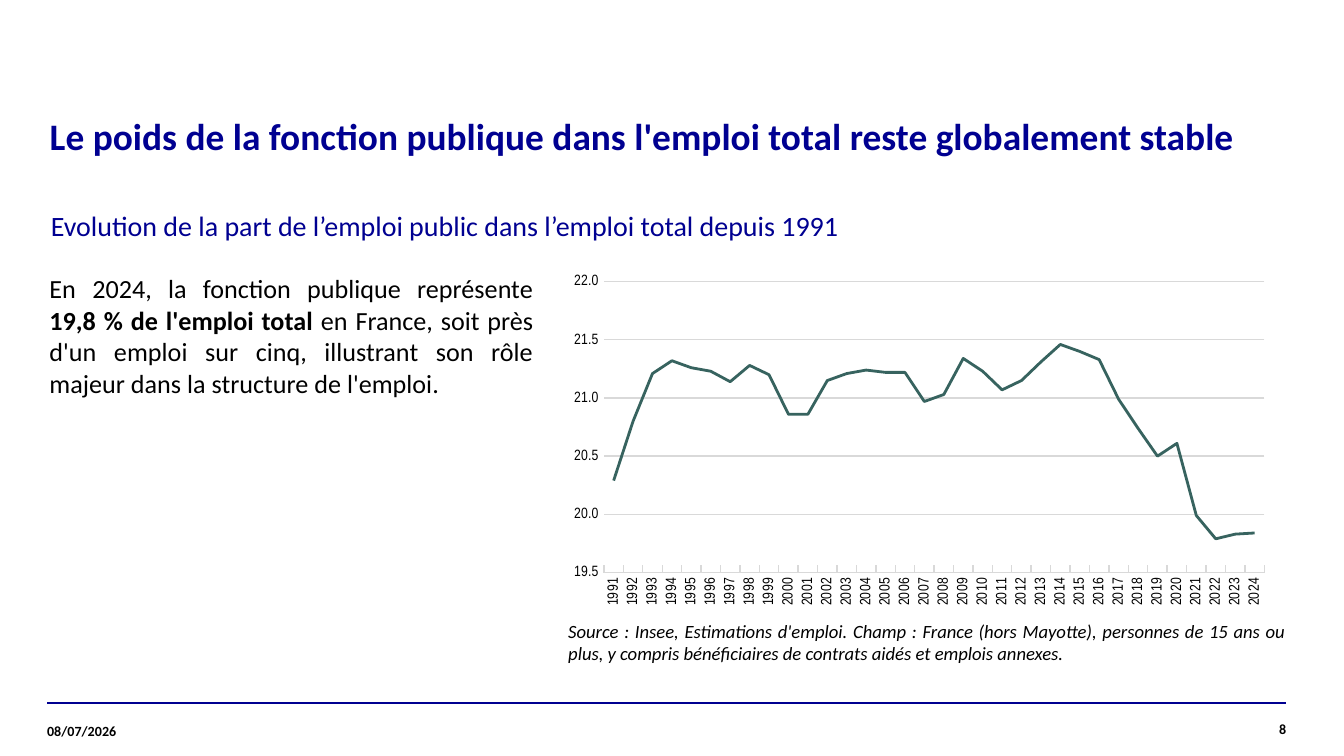
"""Build a slide on the share of public employment in France since 1991."""
from lxml import etree
from pptx import Presentation
from pptx.chart.data import CategoryChartData
from pptx.dml.color import RGBColor
from pptx.enum.chart import XL_CHART_TYPE, XL_MARKER_STYLE, XL_TICK_MARK
from pptx.enum.shapes import MSO_CONNECTOR
from pptx.enum.text import MSO_ANCHOR, PP_ALIGN
from pptx.oxml import parse_xml
from pptx.oxml.ns import nsdecls, qn
from pptx.util import Inches, Pt

LEFT, RIGHT, JUSTIFY = PP_ALIGN.LEFT, PP_ALIGN.RIGHT, PP_ALIGN.JUSTIFY
TOP, MIDDLE = MSO_ANCHOR.TOP, MSO_ANCHOR.MIDDLE
LINE_CHART = XL_CHART_TYPE.LINE
NO_MARKER = XL_MARKER_STYLE.NONE
TICK_INSIDE, TICK_NONE = XL_TICK_MARK.INSIDE, XL_TICK_MARK.NONE
STRAIGHT = MSO_CONNECTOR.STRAIGHT

SLIDE_WIDTH = 10
SLIDE_HEIGHT = SLIDE_WIDTH * 9 / 16
COLORS = {"navy": "000091", "black": "000000", "grid": "D9D9D9", "green": "37635F"}
TEXT_FONT, AXIS_FONT = "Calibri", "Arial Narrow"

TITLE = "Le poids de la fonction publique dans l'emploi total reste globalement stable"
SUBTITLE = "Evolution de la part de l’emploi public dans l’emploi total depuis 1991"
BODY = [
    ("En 2024, la fonction publique représente ", False),
    ("19,8 % de l'emploi total ", True),
    ("en France, soit près d'un emploi sur cinq, illustrant son rôle majeur "
     "dans la structure de l'emploi.", False),
]
SOURCE = ("Source : Insee, Estimations d'emploi. Champ : France (hors Mayotte), personnes "
          "de 15 ans ou plus, y compris bénéficiaires de contrats aidés et emplois annexes.")
DATE, PAGE = "08/07/2026", "8"

FIRST_YEAR = 1991
SERIES_NAME = "Series 1"
SHARES = [
    20.29, 20.8, 21.21, 21.32, 21.26, 21.23, 21.14, 21.28, 21.2, 20.86, 20.86, 21.15,
    21.21, 21.24, 21.22, 21.22, 20.97, 21.03, 21.34, 21.23, 21.07, 21.15, 21.31, 21.46,
    21.4, 21.33, 20.99, 20.74, 20.5, 20.61, 19.99, 19.79, 19.83, 19.84,
]
PLOT_AREA = {"x": 0.067, "y": 0.062, "w": 0.905, "h": 0.808}


def color(name):
    return RGBColor.from_string(COLORS[name])


def add_text(slide, box, runs, size, color_name="black", bold=None, italic=None,
             align=LEFT, anchor=TOP, inset=(0, 0)):
    shape = slide.shapes.add_textbox(*map(Inches, box))
    frame = shape.text_frame
    frame.word_wrap = True
    frame.vertical_anchor = anchor
    frame.margin_left, frame.margin_top = map(Inches, inset)
    frame.margin_right = frame.margin_bottom = 0
    paragraph = frame.paragraphs[0]
    paragraph.alignment = align
    font = paragraph.font
    font.name, font.size, font.bold, font.italic = TEXT_FONT, Pt(size), bold, italic
    font.color.rgb = color(color_name)
    for text, run_bold in runs:
        run = paragraph.add_run()
        run.text = text
        if run_bold:
            run.font.bold = True
    return paragraph


def style_axis(axis, tick_mark):
    axis.major_tick_mark = tick_mark
    axis.minor_tick_mark = TICK_NONE
    font = axis.tick_labels.font
    font.name, font.size = AXIS_FONT, Pt(8)
    font.color.rgb = color("black")


def style_line(line, color_name, width):
    line.color.rgb = color(color_name)
    line.width = Pt(width)


def place_plot(chart):
    sides = "".join(f'<c:{key}Mode val="edge"/>' for key in "xy")
    sides += "".join(f'<c:{key} val="{value}"/>' for key, value in PLOT_AREA.items())
    layout = parse_xml(f'<c:layout {nsdecls("c")}><c:manualLayout>'
                       f'<c:layoutTarget val="inner"/>{sides}</c:manualLayout></c:layout>')
    plot_area = chart.plots[0]._element.getparent()
    for previous in plot_area.findall(qn("c:layout")):
        plot_area.remove(previous)
    plot_area.insert(0, layout)


def add_share_chart(slide):
    data = CategoryChartData(number_format="0.0")
    data.categories = [str(FIRST_YEAR + index) for index in range(len(SHARES))]
    data.add_series(SERIES_NAME, SHARES)
    box = map(Inches, (4.13, 1.93, 5.43, 2.68))
    chart = slide.shapes.add_chart(LINE_CHART, *box, data).chart
    chart.has_legend = chart.has_title = False
    chart.font.name, chart.font.size = TEXT_FONT, Pt(10)
    chart.font.color.rgb = color("black")
    chart.plots[0].vary_by_categories = False
    place_plot(chart)

    series = chart.plots[0].series[0]
    series.smooth = False
    series.marker.style = NO_MARKER
    style_line(series.format.line, "green", 1.5)

    years, values = chart.category_axis, chart.value_axis
    style_axis(years, TICK_INSIDE)
    style_line(years.format.line, "grid", 0.75)
    label_body = next(years._element.iter(qn("a:bodyPr")))
    label_body.set("rot", "-5400000")
    style_axis(values, TICK_NONE)
    values.format.line.fill.background()
    values.minimum_scale, values.maximum_scale, values.major_unit = 19.5, 22, 0.5
    values.tick_labels.number_format = "0.0"
    values.tick_labels.number_format_is_linked = False
    style_line(values.major_gridlines.format.line, "grid", 0.75)


def add_footer(slide):
    rule = slide.shapes.add_connector(
        STRAIGHT, Inches(0.35), Inches(5.23), Inches(9.57), Inches(5.23))
    style_line(rule.line, "navy", 0.8)
    etree.SubElement(rule._element.spPr, qn("a:effectLst"))
    add_text(slide, (8.09, 5.23, 1.48, 0.39), [(PAGE, None)], 7.5, bold=True,
             align=RIGHT, anchor=MIDDLE)
    add_text(slide, (0.35, 5.25, 1.32, 0.38), [(DATE, None)], 7.5, bold=True, anchor=MIDDLE)


def main():
    presentation = Presentation()
    presentation.slide_width = Inches(SLIDE_WIDTH)
    presentation.slide_height = Inches(SLIDE_HEIGHT)
    slide = presentation.slides.add_slide(presentation.slide_layouts[6])
    add_footer(slide)
    title = add_text(slide, (0.35, 0.83, 9.21, 1.01), [(TITLE, None)], 20, "navy",
                     bold=True, inset=(0.02, 0.05))
    title.line_spacing = 0.9
    add_text(slide, (0.28, 1.55, 9.21, 0.25), [(SUBTITLE, None)], 15, "navy",
             inset=(0.1, 0))
    add_text(slide, (0.27, 2.03, 3.7, 1.79), BODY, 14, align=JUSTIFY, inset=(0.1, 0))
    add_share_chart(slide)
    add_text(slide, (4.13, 4.3, 5.43, 0.95), [(SOURCE, None)], 10, italic=True,
             align=JUSTIFY, inset=(0.1, 0.31))
    presentation.save("out.pptx")


if __name__ == "__main__":
    main()
